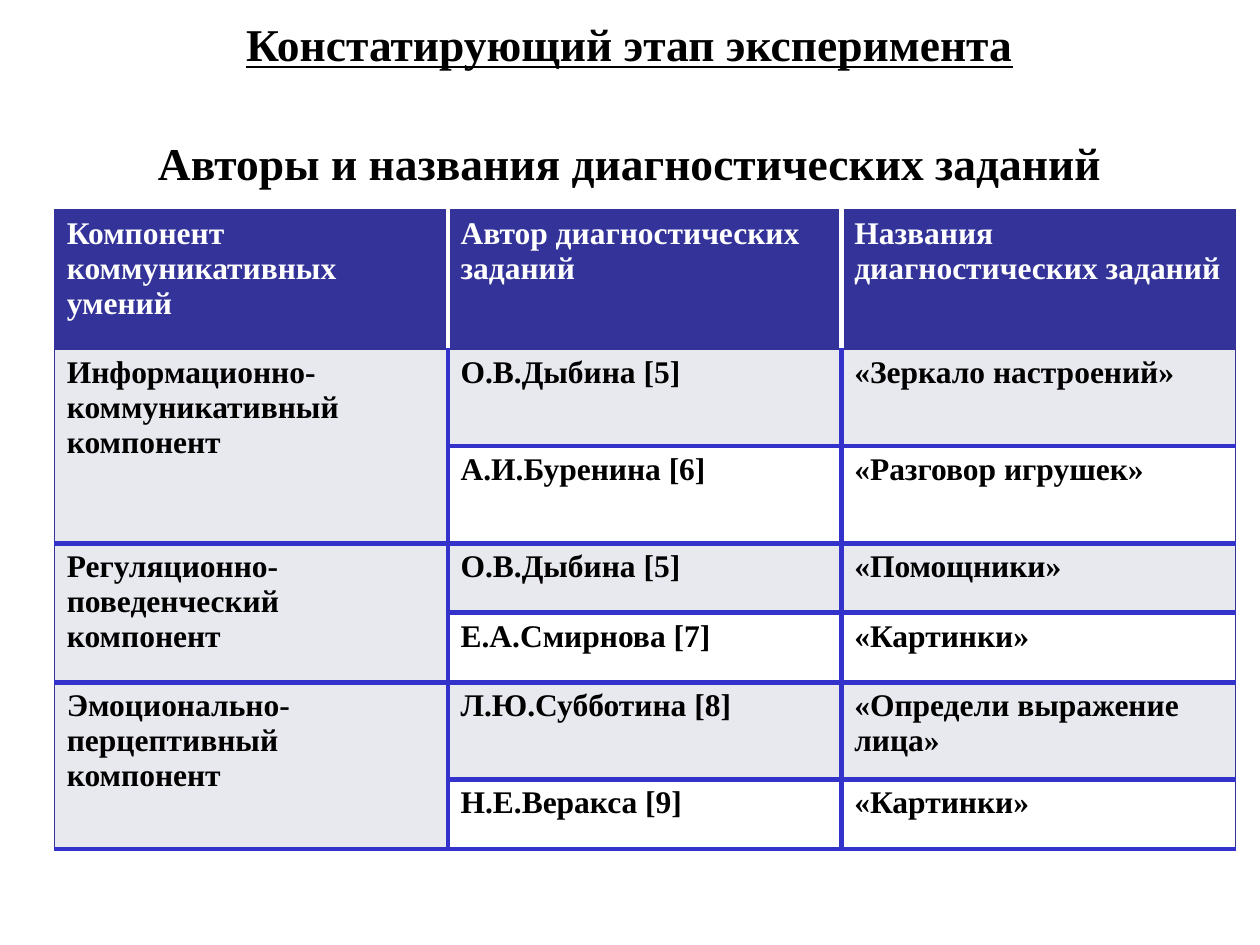
"""Build the slide listing authors and names of the diagnostic tasks."""
from pptx import Presentation
from pptx.dml.color import RGBColor
from pptx.enum import text
from pptx.oxml import parse_xml
from pptx.oxml.ns import nsdecls
from pptx.util import Pt

COLORS = {"navy": "333399", "blue": "3333CC", "band": "E8E8EF",
          "white": "FFFFFF", "black": "000000"}
THIN, THICK, GAP = ("navy", 1), ("blue", 3), ("white", 3)
ROWS = [
    ("Компонент коммуникативных умений", "Автор диагностических заданий",
     "Названия диагностических заданий"),
    ("Информационно-коммуникативный компонент", "О.В.Дыбина [5]", "«Зеркало настроений»"),
    ("", "А.И.Буренина [6]", "«Разговор игрушек»"),
    ("Регуляционно-поведенческий компонент", "О.В.Дыбина [5]", "«Помощники»"),
    ("", "Е.А.Смирнова [7]", "«Картинки»"),
    ("Эмоционально-перцептивный компонент", "Л.Ю.Субботина [8]",
     "«Определи выражение лица»"),
    ("", "Н.Е.Веракса [9]", "«Картинки»"),
]
HEIGHTS = [79.5, 55.5, 55.5, 39.75, 39.75, 55.5, 39.75]


def write(tf, words, size, color):
    tf.text = words
    for r in tf.paragraphs[0].runs:
        r.font.name = "Times New Roman"
        r.font.size = Pt(size)
        r.font.bold = True
        r.font.color.rgb = RGBColor.from_string(COLORS[color])


def set_borders(cell, *edges):
    tc_pr = cell._tc.get_or_add_tcPr()
    for i, (side, (color, width)) in enumerate(zip("LRTB", edges)):
        tc_pr.insert(i, parse_xml(
            f'<a:ln{side} {nsdecls("a")} w="{Pt(width)}"><a:solidFill>'
            f'<a:srgbClr val="{COLORS[color]}"/></a:solidFill></a:ln{side}>'))


prs = Presentation()
prs.slide_width, prs.slide_height = Pt(720), Pt(540)
s = prs.slides.add_slide(prs.slide_layouts[6])

headings = [("Констатирующий этап эксперимента", 31, -2, 657.5, True),
            ("Авторы и названия диагностических заданий", 54, 66, 612, False)]
for words, left, top, width, underline in headings:
    tf = s.shapes.add_textbox(Pt(left), Pt(top), Pt(width), Pt(54)).text_frame
    tf.word_wrap = True
    tf.vertical_anchor = text.MSO_ANCHOR.MIDDLE
    write(tf, words, 26, "black")
    p = tf.paragraphs[0]
    p.alignment = text.PP_ALIGN.CENTER
    if underline:
        p.runs[0].font.underline = True

table = s.shapes.add_table(len(ROWS), 3, Pt(31), Pt(120), Pt(675), Pt(sum(HEIGHTS))).table
for column in table.columns:
    column.width = Pt(225)
for row, height in enumerate(HEIGHTS):
    table.rows[row].height = Pt(height)
    header = row == 0
    inner = GAP if header else THICK
    for col, words in enumerate(ROWS[row]):
        cell = table.cell(row, col)
        write(cell.text_frame, words, 18, "white" if header else "black")
        banded = row % 2 == 1 or col == 0
        fill = "navy" if header else "band" if banded else "white"
        cell.fill.solid()
        cell.fill.fore_color.rgb = RGBColor.from_string(COLORS[fill])
        set_borders(cell, THIN if col == 0 else inner, THIN if col == 2 else inner,
                    THIN if row < 2 else THICK, THIN if header else THICK)
for row in (1, 3, 5):
    table.cell(row, 0).merge(table.cell(row + 1, 0))

prs.save("out.pptx")
